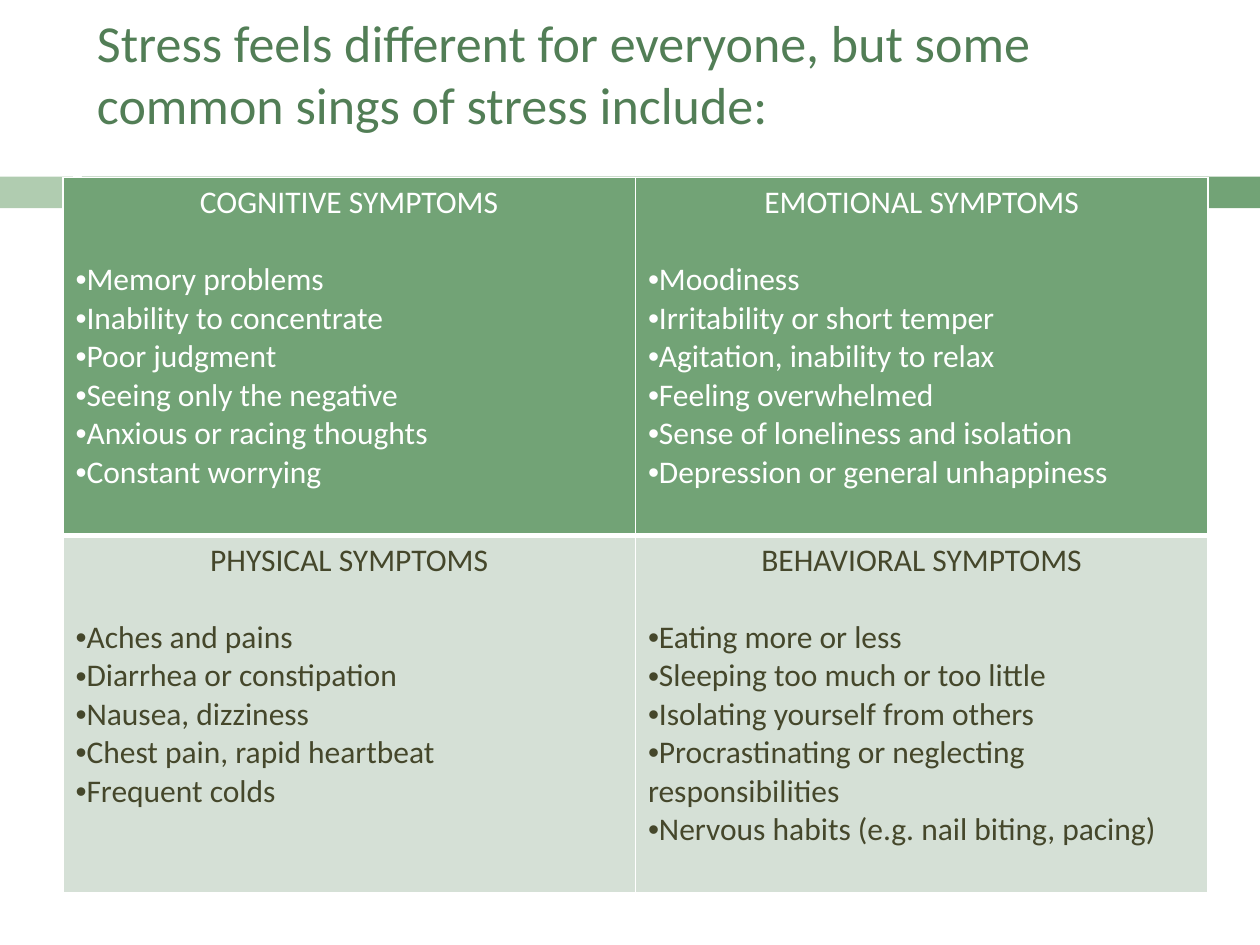
from lxml.etree import SubElement
from pptx import Presentation
from pptx.dml.color import RGBColor
from pptx.enum.shapes import MSO_SHAPE
from pptx.enum.text import MSO_ANCHOR, MSO_AUTO_SIZE, PP_ALIGN
from pptx.oxml import parse_xml
from pptx.oxml.ns import nsdecls, qn
from pptx.util import Cm, Pt

# Content
TITLE = "Stress feels different for everyone, but some common sings of stress include:"
SYMPTOMS = [
    [
        ("COGNITIVE SYMPTOMS", [
            "Memory problems", "Inability to concentrate", "Poor judgment",
            "Seeing only the negative", "Anxious or racing thoughts",
            "Constant worrying"]),
        ("EMOTIONAL SYMPTOMS", [
            "Moodiness", "Irritability or short temper",
            "Agitation, inability to relax", "Feeling overwhelmed",
            "Sense of loneliness and isolation",
            "Depression or general unhappiness"]),
    ],
    [
        ("PHYSICAL SYMPTOMS", [
            "Aches and pains", "Diarrhea or constipation", "Nausea, dizziness",
            "Chest pain, rapid heartbeat", "Frequent colds"]),
        ("BEHAVIORAL SYMPTOMS", [
            "Eating more or less", "Sleeping too much or too little",
            "Isolating yourself from others",
            "Procrastinating or neglecting responsibilities",
            "Nervous habits (e.g. nail biting, pacing)"]),
    ],
]

# Theme
THEME = {
    "font": "Calibri", "title_size": 29.7, "body_size": 18, "heading_gap": 22,
    "title": "527E56", "border": "FFFFFF",
    "rows": [("72A376", "FFFFFF"), ("D5E0D6", "45472B")],  # fill, text
}
BARS = [(0, 1.47, "B0CCB0"), (1.65, 23.75, "72A376")]  # left, width, fill (cm)
BAR_TOP, BAR_HEIGHT = 3.56, 0.64
TABLE_LEFT, TABLE_TOP = 1.27, 3.58
COL_WIDTH, ROW_HEIGHT = 11.54, 7.21


def add_run(p, text, size, color):
    r = p.add_run()
    r.text = text
    r.font.name = THEME["font"]
    r.font.size = Pt(size)
    r.font.bold = False
    r.font.color.rgb = RGBColor.from_string(color)


def add_bullet(p):
    pPr = p._p.get_or_add_pPr()
    pPr.set("marL", "0")
    pPr.set("indent", "0")
    SubElement(pPr, qn("a:buFont"), typeface="Arial")
    SubElement(pPr, qn("a:buChar"), char="•")


def set_borders(cell, widths):
    tcPr = cell._tc.get_or_add_tcPr()
    for i, (side, width) in enumerate(widths.items()):
        tcPr.insert(i, parse_xml(
            f'<a:ln{side} {nsdecls("a")} w="{Pt(width)}"><a:solidFill>'
            f'<a:srgbClr val="{THEME["border"]}"/></a:solidFill></a:ln{side}>'))


def fill_cell(cell, heading, items, fill, color):
    cell.fill.solid()
    cell.fill.fore_color.rgb = RGBColor.from_string(fill)
    tf = cell.text_frame
    p = tf.paragraphs[0]
    p.alignment = PP_ALIGN.CENTER
    p.space_after = Pt(THEME["heading_gap"])
    add_run(p, heading, THEME["body_size"], color)
    for item in items:
        p = tf.add_paragraph()
        add_bullet(p)
        add_run(p, item, THEME["body_size"], color)


prs = Presentation()
prs.slide_width, prs.slide_height = Cm(25.4), Cm(19.05)
s = prs.slides.add_slide(prs.slide_layouts[5])

# Bars behind the table
for left, width, fill in BARS:
    sp = s.shapes.add_shape(MSO_SHAPE.RECTANGLE, Cm(left), Cm(BAR_TOP),
                            Cm(width), Cm(BAR_HEIGHT))
    sp.shadow.inherit = False
    sp.fill.solid()
    sp.fill.fore_color.rgb = RGBColor.from_string(fill)
    sp.line.fill.background()

# Title, raised by its bottom margin
title = s.shapes.title
title.left, title.top, title.width, title.height = Cm(1.7), Cm(0.64), Cm(22.66), Cm(3.18)
tf = title.text_frame
tf.word_wrap = True
tf.auto_size = MSO_AUTO_SIZE.NONE
tf.vertical_anchor = MSO_ANCHOR.MIDDLE
tf.margin_bottom = Cm(1.65)
p = tf.paragraphs[0]
p.alignment = PP_ALIGN.LEFT
add_run(p, TITLE, THEME["title_size"], THEME["title"])

# Symptom table
n_rows, n_cols = len(SYMPTOMS), len(SYMPTOMS[0])
table = s.shapes.add_table(n_rows, n_cols, Cm(TABLE_LEFT), Cm(TABLE_TOP),
                           Cm(COL_WIDTH * n_cols), Cm(ROW_HEIGHT * n_rows)).table
table.first_row = table.horz_banding = False
for col in table.columns:
    col.width = Cm(COL_WIDTH)
for i, (groups, (fill, color)) in enumerate(zip(SYMPTOMS, THEME["rows"])):
    table.rows[i].height = Cm(ROW_HEIGHT)
    for j, (heading, items) in enumerate(groups):
        cell = table.cell(i, j)
        fill_cell(cell, heading, items, fill, color)
        set_borders(cell, {"L": 1, "R": 1, "T": 3 if i else 1, "B": 1 if i else 3})

prs.save("out.pptx")
